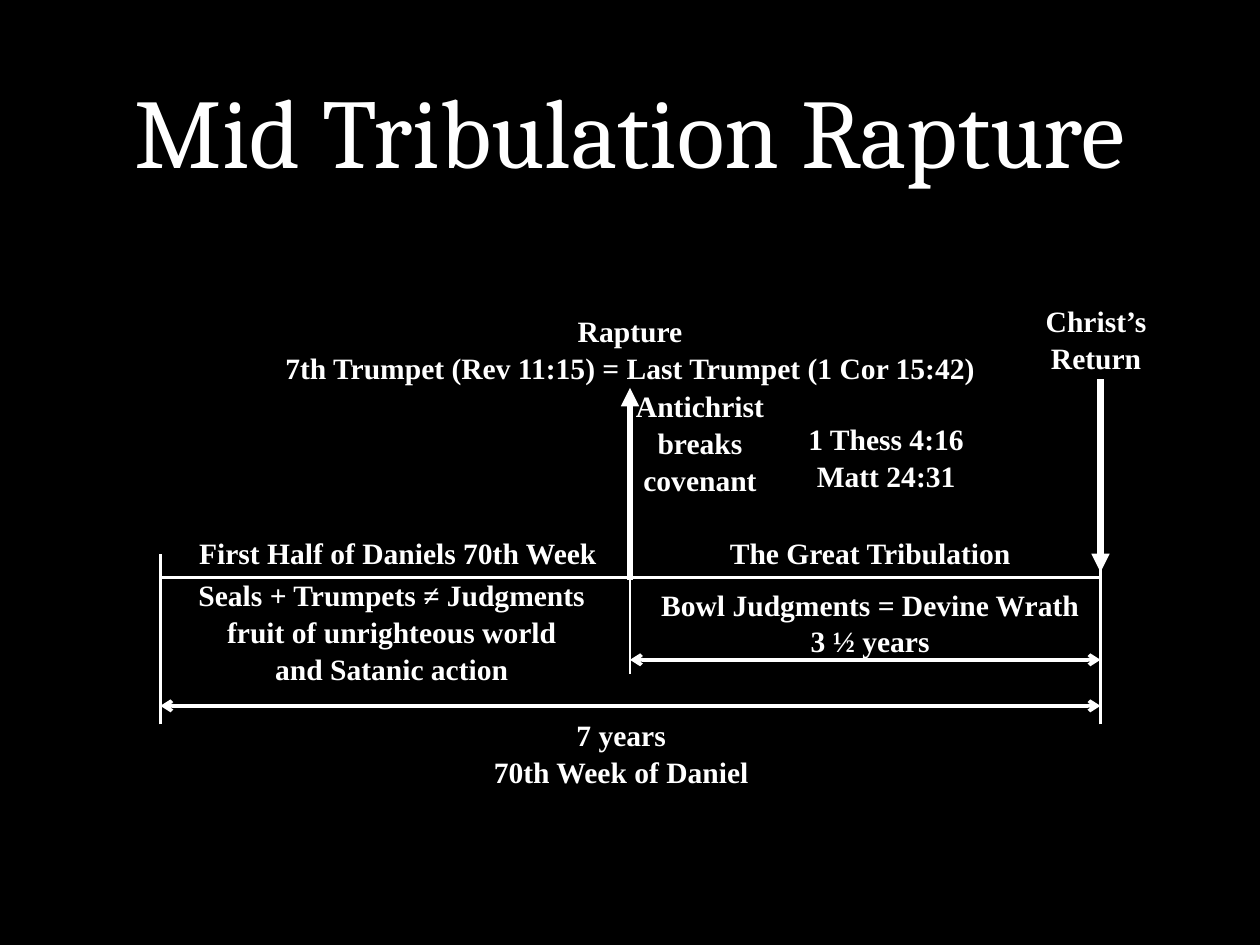
from lxml.etree import SubElement
from pptx import Presentation
from pptx.dml.color import RGBColor
from pptx.enum.shapes import MSO_CONNECTOR as Connector
from pptx.enum.text import MSO_ANCHOR as Anchor, MSO_AUTO_SIZE as AutoSize, PP_ALIGN as Align
from pptx.oxml.ns import qn
from pptx.util import Inches, Pt

WIDTH, HEIGHT = 14.22, 10.67
COLORS = {"background": "000000", "ink": "FFFFFF"}
TITLE = "Mid Tribulation Rapture"
INSET = 0.06
LINE_HEIGHT = 0.375

WEEK_START, MIDPOINT, WEEK_END = 1.81, 7.11, 12.42
TIMELINE, HALF_SPAN, FULL_SPAN = 6.52, 7.45, 7.97

# centre x, centre y, width, lines
LABELS = [
    (4.49, 6.23, 4.61, ["First Half of Daniels 70th Week"]),
    (9.82, 6.23, 3.29, ["The Great Tribulation"]),
    (7.11, 3.93, 7.90, ["Rapture", "7th Trumpet (Rev 11:15) = Last Trumpet (1 Cor 15:42)"]),
    (9.82, 6.82, 4.84, ["Bowl Judgments = Devine Wrath"]),
    (7.01, 8.49, 3.00, ["7 years", "70th Week of Daniel"]),
    (9.82, 7.22, 1.47, ["3 ½ years"]),
    (10.0, 5.15, 1.96, ["1 Thess 4:16", "Matt 24:31"]),
    (4.42, 7.12, 4.57, ["Seals + Trumpets ≠ Judgments", "fruit of unrighteous world", "and Satanic action"]),
    (7.90, 4.99, 1.74, ["Antichrist", "breaks", "covenant"]),
    (12.37, 3.82, 1.34, ["Christ’s", "Return"]),
]

RULES = [
    ((WEEK_START, TIMELINE), (WEEK_END, TIMELINE), 2, {}),
    ((WEEK_START, 8.18), (WEEK_START, 6.25), 2, {}),
    ((WEEK_END, 8.18), (WEEK_END, 6.25), 2, {}),
    ((MIDPOINT, 7.61), (MIDPOINT, 6.49), 2, {}),
    ((MIDPOINT, 6.55), (MIDPOINT, 4.38), 5, {"tailEnd": "triangle"}),
    ((WEEK_END, 4.28), (WEEK_END, 6.46), 5, {"tailEnd": "triangle"}),
    ((WEEK_START, FULL_SPAN), (WEEK_END, FULL_SPAN), 3, {"headEnd": "arrow", "tailEnd": "arrow"}),
    ((MIDPOINT, HALF_SPAN), (WEEK_END, HALF_SPAN), 3, {"headEnd": "arrow", "tailEnd": "arrow"}),
]


def color(name):
    return RGBColor.from_string(COLORS[name])


def write(box, lines, font, size, bold, spacing):
    frame = box.text_frame
    frame.text = "\n".join(lines)
    frame.vertical_anchor = Anchor.MIDDLE
    frame.margin_left = frame.margin_right = Inches(INSET)
    frame.margin_top = frame.margin_bottom = Inches(INSET)
    for para in frame.paragraphs:
        para.alignment = Align.CENTER
        para.line_spacing = spacing
        for span in para.runs:
            span.font.name = font
            span.font.size = Pt(size)
            span.font.bold = bold
            span.font.color.rgb = color("ink")
    return frame


def add_title(page):
    title = page.shapes.title
    title.left, title.top = Inches(1.04), Inches(0.28)
    title.width, title.height = Inches(WIDTH - 2 * 1.04), Inches(2.36)
    frame = write(title, [TITLE], "Cambria", 80, False, 1.0)
    frame.auto_size = AutoSize.NONE


def add_label(page, center_x, center_y, width, lines):
    height = len(lines) * LINE_HEIGHT + 2 * INSET
    box = page.shapes.add_textbox(
        Inches(center_x - width / 2), Inches(center_y - height / 2), Inches(width), Inches(height))
    frame = write(box, lines, "Times New Roman", 24, True, 1.05)
    frame.word_wrap = False


def add_rule(page, start, end, weight, arrowheads):
    points = [Inches(value) for value in start + end]
    rule = page.shapes.add_connector(Connector.STRAIGHT, *points)
    rule.line.color.rgb = color("ink")
    rule.line.width = Pt(weight)
    outline = rule.line._get_or_add_ln()
    for tag, kind in arrowheads.items():
        SubElement(outline, qn(f"a:{tag}"), type=kind)
    SubElement(rule._element.spPr, qn("a:effectLst"))


def main():
    deck = Presentation()
    deck.slide_width, deck.slide_height = Inches(WIDTH), Inches(HEIGHT)
    page = deck.slides.add_slide(deck.slide_layouts[5])
    page.background.fill.solid()
    page.background.fill.fore_color.rgb = color("background")
    add_title(page)
    for rule in RULES:
        add_rule(page, *rule)
    for label in LABELS:
        add_label(page, *label)
    deck.save("out.pptx")


if __name__ == "__main__":
    main()
